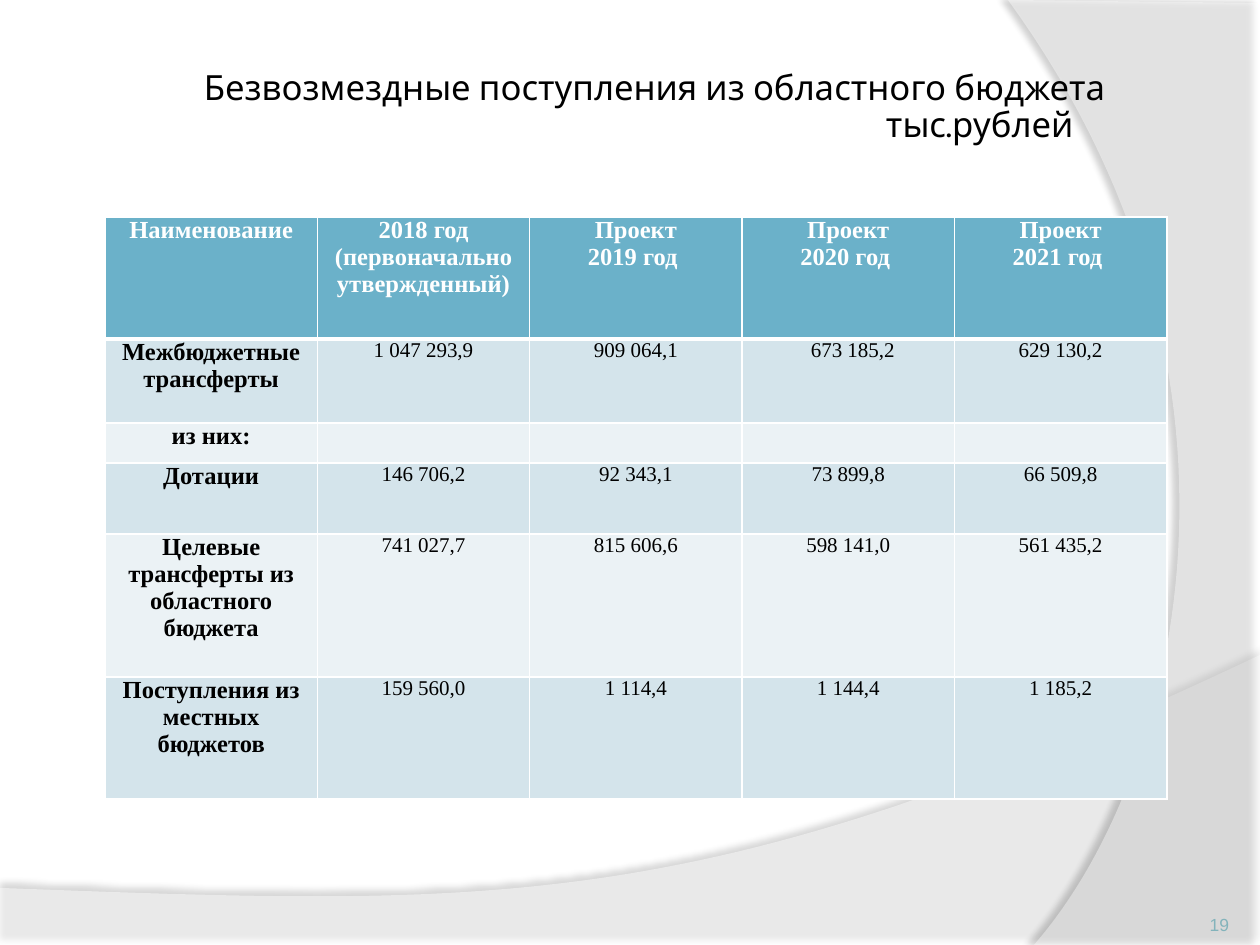
from lxml.etree import SubElement
from pptx import Presentation
from pptx.dml.color import RGBColor
from pptx.enum.text import MSO_ANCHOR as Anchor, PP_ALIGN as Align
from pptx.oxml.ns import qn
from pptx.util import Emu, Pt

SCALE = 914400 / 126
WHITE = RGBColor(0xFF, 0xFF, 0xFF)
BLACK = RGBColor(0x00, 0x00, 0x00)
HEADER_BLUE = RGBColor(0x6B, 0xB1, 0xC9)
BAND_DARK = RGBColor(0xD4, 0xE4, 0xEB)
BAND_LIGHT = RGBColor(0xEB, 0xF2, 0xF5)
NUMBER_TEAL = RGBColor(0x83, 0xB3, 0xBB)

TABLE_WIDTH = 1062
ROW_HEIGHTS = [122, 84, 40, 71, 143, 122]
ROWS = [
    ["Наименование", "2018 год (первоначально утвержденный)",
     "Проект\n2019 год ", "Проект\n2020 год ", "Проект\n2021 год "],
    ["Межбюджетные трансферты", "1 047 293,9", "909 064,1", "673 185,2", "629 130,2"],
    ["из них:", "", "", "", ""],
    ["Дотации", "146 706,2", "92 343,1", "73 899,8", "66 509,8"],
    ["Целевые трансферты из областного бюджета",
     "741 027,7", "815 606,6", "598 141,0", "561 435,2"],
    ["Поступления из местных бюджетов", "159 560,0", "1 114,4", "1 144,4", "1 185,2"],
]


def px(value):
    return Emu(round(value * SCALE))


def set_font(paragraph, name, size, color, bold=False):
    font = paragraph.font
    font.name, font.size, font.bold = name, Pt(size), bold
    font.color.rgb = color


def curve_points(start, control_1, control_2, end, steps=60):
    for step in range(1, steps + 1):
        t = step / steps
        u = 1 - t
        yield tuple(
            u**3 * a + 3 * u * u * t * b + 3 * u * t * t * c + t**3 * d
            for a, b, c, d in zip(start, control_1, control_2, end)
        )


def add_wave(slide, corners, curve, opacity, shadow_opacity, distance, direction):
    points = [*corners, *curve_points(corners[-1], *curve)]
    points = [(px(x), px(y)) for x, y in points]
    builder = slide.shapes.build_freeform(*points[0], scale=1.0)
    builder.add_line_segments(points[1:], close=True)
    shape = builder.convert_to_shape()
    shape.fill.solid()
    shape.fill.fore_color.rgb = WHITE
    shape.line.fill.background()
    shape.shadow.inherit = False
    properties = shape._element.spPr
    fill_color = properties.find(qn("a:solidFill")).find(qn("a:srgbClr"))
    SubElement(fill_color, qn("a:alpha"), val=str(opacity * 1000))
    shadow = SubElement(
        properties.find(qn("a:effectLst")), qn("a:outerShdw"), blurRad=str(Pt(4)),
        dist=str(Pt(distance)), dir=str(direction * 60000), rotWithShape="0")
    shadow_color = SubElement(shadow, qn("a:srgbClr"), val=str(BLACK))
    SubElement(shadow_color, qn("a:alpha"), val=str(shadow_opacity * 1000))


def add_text_frame(slide, left, top, width, height, anchor, inset):
    box = slide.shapes.add_textbox(px(left), px(top), px(width), px(height))
    frame = box.text_frame
    frame.word_wrap = True
    frame.vertical_anchor = anchor
    frame.margin_left = frame.margin_right = px(inset)
    frame.margin_top = frame.margin_bottom = px(inset)
    return frame


def add_title(slide):
    frame = add_text_frame(slide, 154, 66, 1001, 118, Anchor.TOP, 6)
    frame.text = "Безвозмездные поступления из областного бюджета\nтыс.рублей"
    heading, unit = frame.paragraphs
    heading.alignment = Align.CENTER
    unit.alignment = Align.LEFT
    unit._p.get_or_add_pPr().set("marL", str(px(726)))
    for paragraph in frame.paragraphs:
        paragraph.line_spacing = 0.87
        set_font(paragraph, "Karla", 19.8, BLACK)


def add_page_number(slide):
    frame = add_text_frame(slide, 1124, 885, 105, 50, Anchor.BOTTOM, 0)
    frame.text = "19"
    frame.paragraphs[0].alignment = Align.RIGHT
    set_font(frame.paragraphs[0], "Arial", 10, NUMBER_TEAL)


def set_borders(cell, row):
    properties = cell._tc.get_or_add_tcPr()
    widths = {"L": 1, "R": 1, "T": 3 if row == 1 else 1, "B": 3 if row == 0 else 1}
    for side, width in widths.items():
        line = SubElement(properties, qn(f"a:ln{side}"), w=str(Pt(width)))
        fill = SubElement(line, qn("a:solidFill"))
        SubElement(fill, qn("a:srgbClr"), val=str(WHITE))


def fill_cell(cell, text, row, column):
    is_header = row == 0
    is_label = is_header or column == 0
    set_borders(cell, row)
    cell.fill.solid()
    cell.fill.fore_color.rgb = (
        HEADER_BLUE if is_header else BAND_DARK if row % 2 else BAND_LIGHT)
    cell.margin_left = cell.margin_right = px(9)
    cell.margin_top = cell.margin_bottom = 0
    cell.text = text
    for paragraph in cell.text_frame.paragraphs:
        paragraph.alignment = Align.CENTER
        set_font(paragraph, "Times New Roman", 14 if is_label else 12,
                 WHITE if is_header else BLACK, is_label)


def add_budget_table(slide):
    count = len(ROWS[0])
    table = slide.shapes.add_table(
        len(ROWS), count, px(105), px(217), px(TABLE_WIDTH), px(sum(ROW_HEIGHTS))).table
    for column in range(count):
        table.columns[column].width = px(TABLE_WIDTH / count)
    for row, (height, texts) in enumerate(zip(ROW_HEIGHTS, ROWS)):
        table.rows[row].height = px(height)
        for column, text in enumerate(texts):
            fill_cell(table.cell(row, column), text, row, column)
    indented = table.cell(1, 3).text_frame.paragraphs[0]
    indented._p.get_or_add_pPr().set("indent", str(px(9)))


def main():
    presentation = Presentation()
    presentation.slide_width, presentation.slide_height = px(1260), px(945)
    slide = presentation.slides.add_slide(presentation.slide_layouts[6])
    add_wave(slide, [(0, 888), (0, 946), (1260, 946), (1260, 655)],
             [(704, 919), (493, 906), (0, 888)], 45, 35, 3.5, 270)
    add_wave(slide, [(1260, 3), (1260, 945), (1034, 945)],
             [(1178, 780), (1283, 378), (1008, 0)], 40, 45, 4, 180)
    add_budget_table(slide)
    add_title(slide)
    add_page_number(slide)
    presentation.save("out.pptx")


if __name__ == "__main__":
    main()
